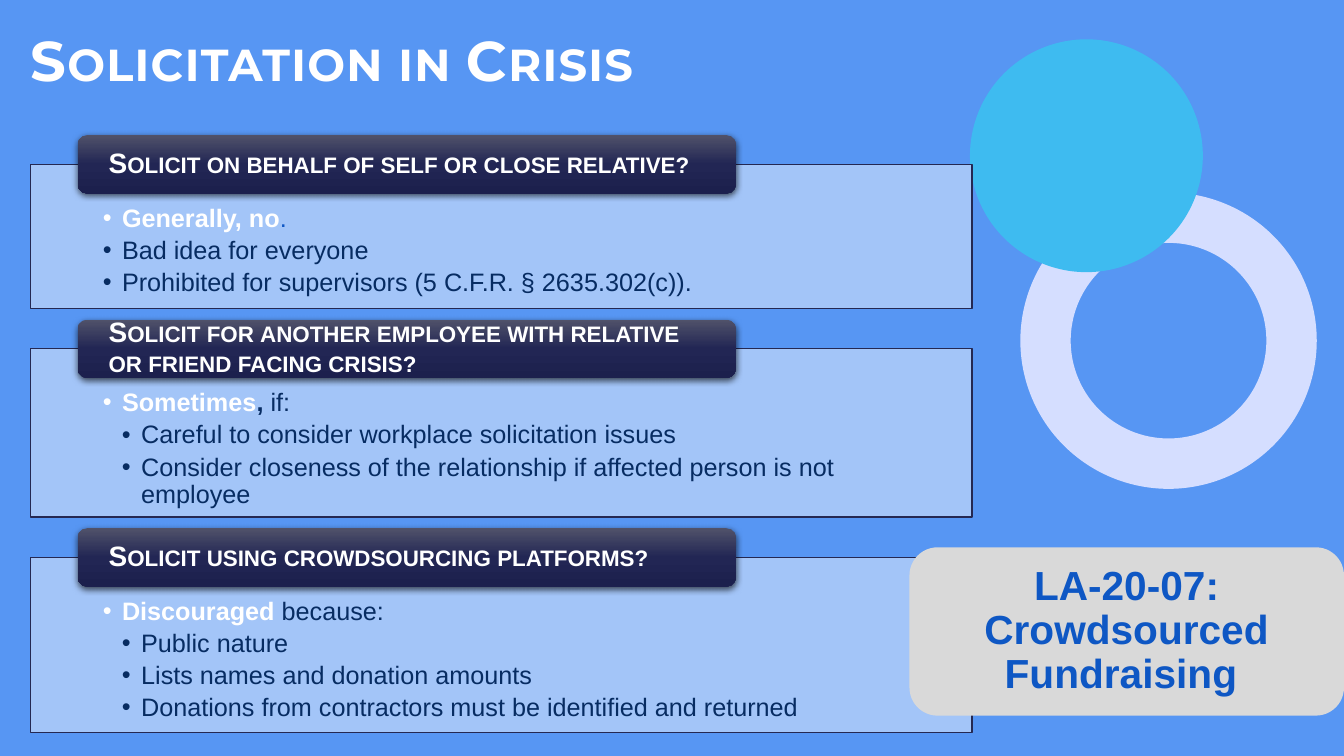
from dataclasses import dataclass

from lxml import etree
from pptx import Presentation
from pptx.dml.color import RGBColor
from pptx.enum.shapes import MSO_SHAPE
from pptx.enum.text import MSO_ANCHOR, MSO_AUTO_SIZE, PP_ALIGN
from pptx.oxml import parse_xml
from pptx.oxml.ns import nsdecls, qn
from pptx.util import Inches, Pt

OVAL, DONUT = MSO_SHAPE.OVAL, MSO_SHAPE.DONUT
ROUNDED = MSO_SHAPE.ROUNDED_RECTANGLE
TOP, MIDDLE = MSO_ANCHOR.TOP, MSO_ANCHOR.MIDDLE
LEFT, CENTER = PP_ALIGN.LEFT, PP_ALIGN.CENTER
COMPARISON_LAYOUT = 3 + 1

WHITE, NAVY, BLUE = "FFFFFF", "072C62", "0E57C4"
PANEL_LEFT, PANEL_WIDTH, FIRST_PANEL_TOP, PANEL_GAP = 0.3, 9.34, 1.63, 0.4
HEADER_LEFT, HEADER_WIDTH, HEADER_HEIGHT = 0.77, 6.53, 0.58
BULLET_INDENT = 0.19


@dataclass(frozen=True)
class Span:
    text: str
    color: str = NAVY
    bold: bool = False


@dataclass(frozen=True)
class Section:
    question: str
    height: float
    answer: tuple[Span, ...]
    points: tuple[str, ...]
    point_depth: int = 2


SECTIONS = (
    Section("Solicit on behalf of self or close relative?", 1.43,
            (Span("Generally, no", WHITE, True), Span(".", BLUE)),
            ("Bad idea for everyone",
             "Prohibited for supervisors (5 C.F.R. § 2635.302(c))."), 1),
    Section("Solicit for another employee with relative or friend facing crisis?", 1.67,
            (Span("Sometimes", WHITE, True), Span(", ", NAVY, True), Span("if:")),
            ("Careful to consider workplace solicitation issues",
             "Consider closeness of the relationship if affected person is not employee")),
    Section("Solicit using crowdsourcing platforms?", 1.74,
            (Span("Discouraged ", WHITE, True), Span("because:")),
            ("Public nature", "Lists names and donation amounts",
             "Donations from contractors must be identified and returned")),
)


def paint(color_format, color: str) -> None:
    color_format.rgb = RGBColor.from_string(color)


def place(shape, left: float, top: float, width: float, height: float) -> None:
    box = {"left": left, "top": top, "width": width, "height": height}
    for name, value in box.items():
        setattr(shape, name, Inches(value))


def add_solid(slide, kind, box: tuple[float, ...], color: str):
    shape = slide.shapes.add_shape(kind, *map(Inches, box))
    shape.shadow.inherit = False
    shape.fill.solid()
    paint(shape.fill.fore_color, color)
    shape.line.fill.background()
    return shape


def format_frame(frame, anchor, left: float, top: float, right: float, bottom: float) -> None:
    values = {"word_wrap": True, "auto_size": MSO_AUTO_SIZE.NONE, "vertical_anchor": anchor,
              "margin_left": Inches(left), "margin_top": Inches(top),
              "margin_right": Inches(right), "margin_bottom": Inches(bottom)}
    for name, value in values.items():
        setattr(frame, name, value)


def format_paragraph(paragraph, alignment=LEFT, after: float = 0) -> None:
    values = {"alignment": alignment, "line_spacing": 0.9,
              "space_before": Pt(0), "space_after": Pt(after)}
    for name, value in values.items():
        setattr(paragraph, name, value)


def add_run(paragraph, span: Span, size: float, font: str = "Arial",
            small_caps: bool = False):
    run = paragraph.add_run()
    run.text = span.text
    for name, value in {"name": font, "size": Pt(size), "bold": span.bold}.items():
        setattr(run.font, name, value)
    paint(run.font.color, span.color)
    if small_caps:
        run.font._element.set("cap", "small")
    return run


def add_bullet(paragraph, depth: int) -> None:
    paragraph.level = depth
    properties = paragraph._p.get_or_add_pPr()
    properties.set("marL", str(Inches(BULLET_INDENT * depth)))
    properties.set("indent", str(-Inches(BULLET_INDENT)))
    etree.SubElement(properties, qn("a:buChar")).set("char", "•")


def fill_panel(panel, section: Section, top: float) -> None:
    place(panel, PANEL_LEFT, top, PANEL_WIDTH, section.height)
    panel.fill.solid()
    paint(panel.fill.fore_color, "ACCBF9")
    color = panel._element.spPr.find(f"{qn('a:solidFill')}/{qn('a:srgbClr')}")
    etree.SubElement(color, qn("a:alpha")).set("val", "90000")
    paint(panel.line.color, "242852")
    panel.line.width = Pt(1)
    frame = panel.text_frame
    format_frame(frame, TOP, 0.72, 0.41, 0.72, 0.14)
    rows = [(section.answer, 1)]
    rows += [((Span(point),), section.point_depth) for point in section.points]
    for index, (spans, depth) in enumerate(rows):
        paragraph = frame.add_paragraph() if index else frame.paragraphs[0]
        add_bullet(paragraph, depth)
        format_paragraph(paragraph, after=3.5)
        for span in spans:
            add_run(paragraph, span, 18)


def add_header(slide, question: str, top: float) -> None:
    box = (HEADER_LEFT, top, HEADER_WIDTH, HEADER_HEIGHT)
    header = add_solid(slide, ROUNDED, box, "222654")
    properties = header._element.spPr
    stops = "".join(f'<a:gs pos="{position}"><a:srgbClr val="{color}"/></a:gs>'
                    for position, color in ((0, "50526A"), (50000, "222654"), (100000, "1C204D")))
    gradient = parse_xml(f'<a:gradFill {nsdecls("a")} rotWithShape="1"><a:gsLst>{stops}</a:gsLst>'
                         '<a:lin ang="5400000" scaled="0"/></a:gradFill>')
    properties.replace(properties.find(qn("a:solidFill")), gradient)
    shadow = parse_xml(f'<a:outerShdw {nsdecls("a")} blurRad="{Pt(4.5)}" dist="{Pt(1.5)}" '
                       'dir="5400000" algn="ctr" rotWithShape="0"><a:srgbClr val="000000">'
                       '<a:alpha val="63000"/></a:srgbClr></a:outerShdw>')
    properties.find(qn("a:effectLst")).append(shadow)
    format_frame(header.text_frame, MIDDLE, 0.28, 0.03, 0.28, 0.03)
    paragraph = header.text_frame.paragraphs[0]
    format_paragraph(paragraph)
    add_run(paragraph, Span(question, WHITE, True), 20, small_caps=True)


def main() -> None:
    presentation = Presentation()
    presentation.slide_width, presentation.slide_height = Inches(13.33), Inches(7.5)
    slide = presentation.slides.add_slide(presentation.slide_layouts[COMPARISON_LAYOUT])
    slide.background.fill.solid()
    paint(slide.background.fill.fore_color, "5796F3")

    # Decorative circles, behind the placeholders
    ring = add_solid(slide, DONUT, (10.12, 1.91, 2.94, 2.94), "D5DEFF")
    ring.adjustments[0] = 0.17
    disc = add_solid(slide, OVAL, (9.62, 0.39, 2.31, 2.31), "3EBBF0")
    for circle in (disc, ring):
        slide.shapes._spTree.insert(2, circle._element)

    # Title
    title = slide.shapes.title
    place(title, 0.3, 0.23, 8.12, 0.8)
    format_frame(title.text_frame, MIDDLE, 0, 0, 0, 0)
    paragraph = title.text_frame.paragraphs[0]
    format_paragraph(paragraph)
    run = add_run(paragraph, Span("Solicitation in Crisis", WHITE, True), 40, "Montserrat", True)
    run.font._element.set("spc", "100")

    # Questions and their answers
    *panels, spare = [shape for shape in slide.placeholders if shape != title]
    spare._element.getparent().remove(spare._element)
    top = FIRST_PANEL_TOP
    for panel, section in zip(panels, SECTIONS):
        fill_panel(panel, section, top)
        add_header(slide, section.question, top - HEADER_HEIGHT / 2)
        top += section.height + PANEL_GAP

    # Reference callout
    callout = add_solid(slide, ROUNDED, (9.02, 5.43, 4.31, 1.67), "D9D9D9")
    format_frame(callout.text_frame, MIDDLE, 0.2, 0.2, 0.2, 0.2)
    paragraph = callout.text_frame.paragraphs[0]
    format_paragraph(paragraph, CENTER)
    add_run(paragraph, Span("LA-20-07: Crowdsourced Fundraising ", BLUE, True), 29)

    presentation.save("out.pptx")


if __name__ == "__main__":
    main()
